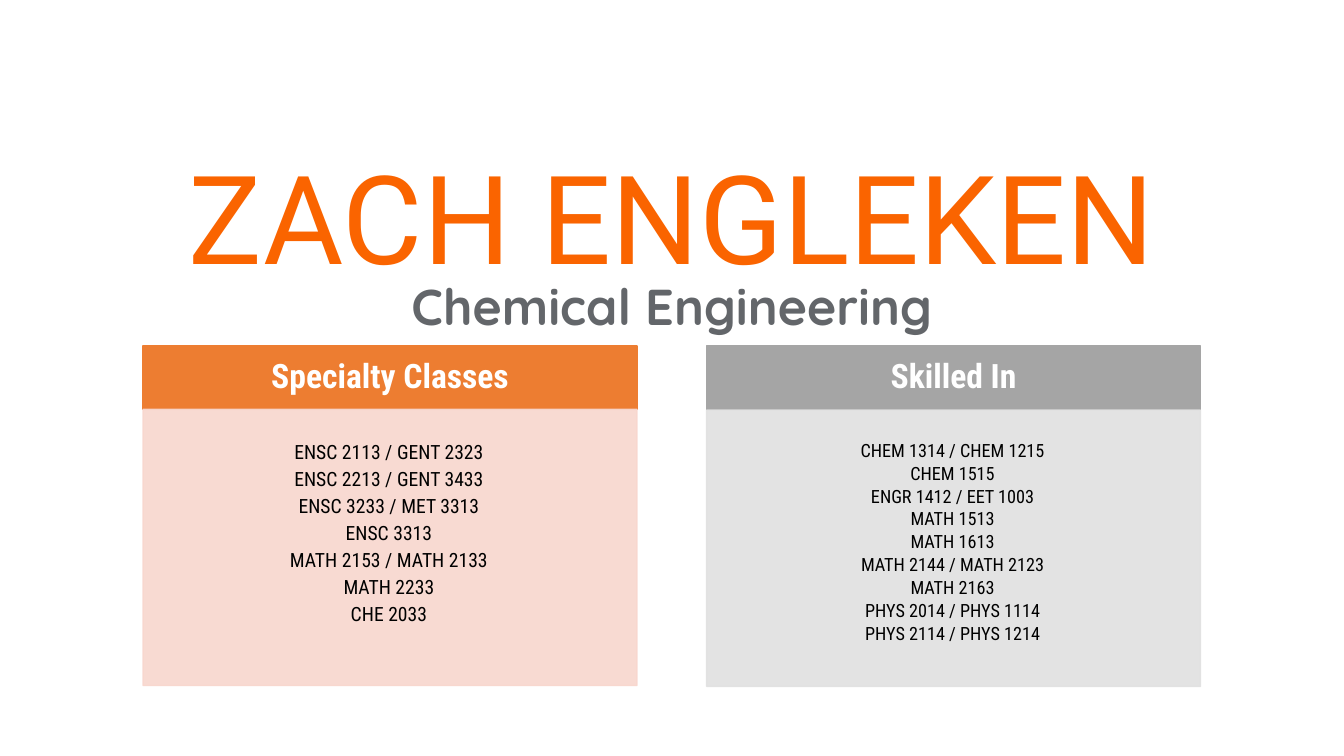
"""Build a tutor profile slide with two panels of course lists."""
from dataclasses import dataclass

from lxml.etree import SubElement
from pptx import Presentation
from pptx.dml.color import RGBColor
from pptx.enum.text import MSO_ANCHOR, MSO_AUTO_SIZE, PP_ALIGN
from pptx.oxml.ns import qn
from pptx.util import Pt


@dataclass(frozen=True)
class Theme:
    name_color: str = "FA6400"
    subject_color: str = "63666A"
    heading_color: str = "FFFFFF"
    course_color: str = "000000"
    name_font: str = "Roboto"
    subject_font: str = "Quicksand"
    panel_font: str = "Roboto Condensed"
    name_size: float = 88
    subject_size: float = 36
    heading_size: float = 24


@dataclass(frozen=True)
class TextStyle:
    font: str
    size: float
    color: str
    bold: bool = False
    line_spacing: float = 1.0
    space_after: float = 0
    anchor: MSO_ANCHOR = MSO_ANCHOR.TOP
    insets: tuple[float, float, float, float] = (7.2, 3.6, 7.2, 3.6)


@dataclass(frozen=True)
class Box:
    left: float
    top: float
    width: float
    height: float


@dataclass(frozen=True)
class Panel:
    heading: str
    courses: tuple[str, ...]
    left: float
    body_top: float
    heading_fill: str
    body_fill: str
    course_size: float
    line_spacing: float
    space_after: float
    top_inset: float
    heading_index: int
    body_index: int


THEME = Theme()
PANEL_WIDTH, HEADING_TOP, HEADING_HEIGHT, BODY_HEIGHT = 352.8, 247, 45.4, 197.3
BODY_OPACITY = 90
PANELS = (
    Panel("Specialty Classes",
          ("ENSC 2113 / GENT 2323", "ENSC 2213 / GENT 3433", "ENSC 3233 / MET 3313",
           "ENSC 3313", "MATH 2153 / MATH 2133", "MATH 2233", "CHE 2033"),
          102.2, 292.4, "ED7D31", "F8D7CE", 14, 1.0, 2.5, 22, 1, 2),
    Panel("Skilled In",
          ("CHEM 1314 / CHEM 1215", "CHEM 1515", "ENGR 1412 / EET 1003", "MATH 1513",
           "MATH 1613", "MATH 2144 / MATH 2123", "MATH 2163",
           "PHYS 2014 / PHYS 1114", "PHYS 2114 / PHYS 1214"),
          504.7, 293, "A5A5A5", "E1E1E1", 13, 0.9, 2.3, 22.4, 3, 4),
)


def place(shape, box: Box) -> None:
    shape.left, shape.top = Pt(box.left), Pt(box.top)
    shape.width, shape.height = Pt(box.width), Pt(box.height)


def write(shape, lines: tuple[str, ...], style: TextStyle) -> None:
    frame = shape.text_frame
    frame.text = "\n".join(lines)
    frame.word_wrap = True
    frame.auto_size = MSO_AUTO_SIZE.NONE
    frame.vertical_anchor = style.anchor
    frame.margin_left, frame.margin_top, frame.margin_right, frame.margin_bottom = map(
        Pt, style.insets)
    for paragraph in frame.paragraphs:
        paragraph.alignment = PP_ALIGN.CENTER
        paragraph.line_spacing = style.line_spacing
        paragraph.space_before = Pt(0)
        paragraph.space_after = Pt(style.space_after)
        paragraph.font.name = style.font
        paragraph.font.size = Pt(style.size)
        paragraph.font.bold = style.bold
        paragraph.font.color.rgb = RGBColor.from_string(style.color)
        properties = paragraph._p.get_or_add_pPr()
        properties.set("marL", "0")
        properties.set("indent", "0")
        properties.insert_element_before(
            properties.makeelement(qn("a:buNone")), "a:tabLst", "a:defRPr", "a:extLst")


def paint(shape, color: str, opacity: int = 100) -> None:
    shape.fill.solid()
    shape.fill.fore_color.rgb = RGBColor.from_string(color)
    shape.line.color.rgb = RGBColor.from_string(color)
    shape.line.width = Pt(1)
    if opacity < 100:
        for color_element in shape._element.spPr.iter(qn("a:srgbClr")):
            SubElement(color_element, qn("a:alpha"), val=str(opacity * 1000))


def draw_panel(slide, panel: Panel) -> None:
    placeholders = {shape.placeholder_format.idx: shape for shape in slide.placeholders}
    heading = placeholders[panel.heading_index]
    place(heading, Box(panel.left, HEADING_TOP, PANEL_WIDTH, HEADING_HEIGHT))
    paint(heading, panel.heading_fill)
    write(heading, (panel.heading,), TextStyle(
        THEME.panel_font, THEME.heading_size, THEME.heading_color, bold=True,
        line_spacing=0.9, anchor=MSO_ANCHOR.MIDDLE, insets=(13.7, 7.9, 13.7, 7.9)))
    body = placeholders[panel.body_index]
    place(body, Box(panel.left, panel.body_top, PANEL_WIDTH, BODY_HEIGHT))
    paint(body, panel.body_fill, BODY_OPACITY)
    write(body, panel.courses, TextStyle(
        THEME.panel_font, panel.course_size, THEME.course_color,
        line_spacing=panel.line_spacing, space_after=panel.space_after,
        insets=(5, panel.top_inset, 6.5, 7.2)))


def main() -> None:
    presentation = Presentation()
    presentation.slide_width, presentation.slide_height = Pt(960), Pt(540)
    comparison_layout = presentation.slide_layouts.get_by_name("Comparison")
    slide = presentation.slides.add_slide(comparison_layout)

    title = slide.shapes.title
    place(title, Box(45.4, 97.2, 869, 113.8))
    write(title, ("ZACH ENGLEKEN",),
          TextStyle(THEME.name_font, THEME.name_size, THEME.name_color))
    subject = slide.shapes.add_textbox(Pt(45.4), Pt(193), Pt(869), Pt(51))
    write(subject, ("Chemical Engineering",),
          TextStyle(THEME.subject_font, THEME.subject_size, THEME.subject_color, bold=True))

    for panel in PANELS:
        draw_panel(slide, panel)
    presentation.save("out.pptx")


if __name__ == "__main__":
    main()
